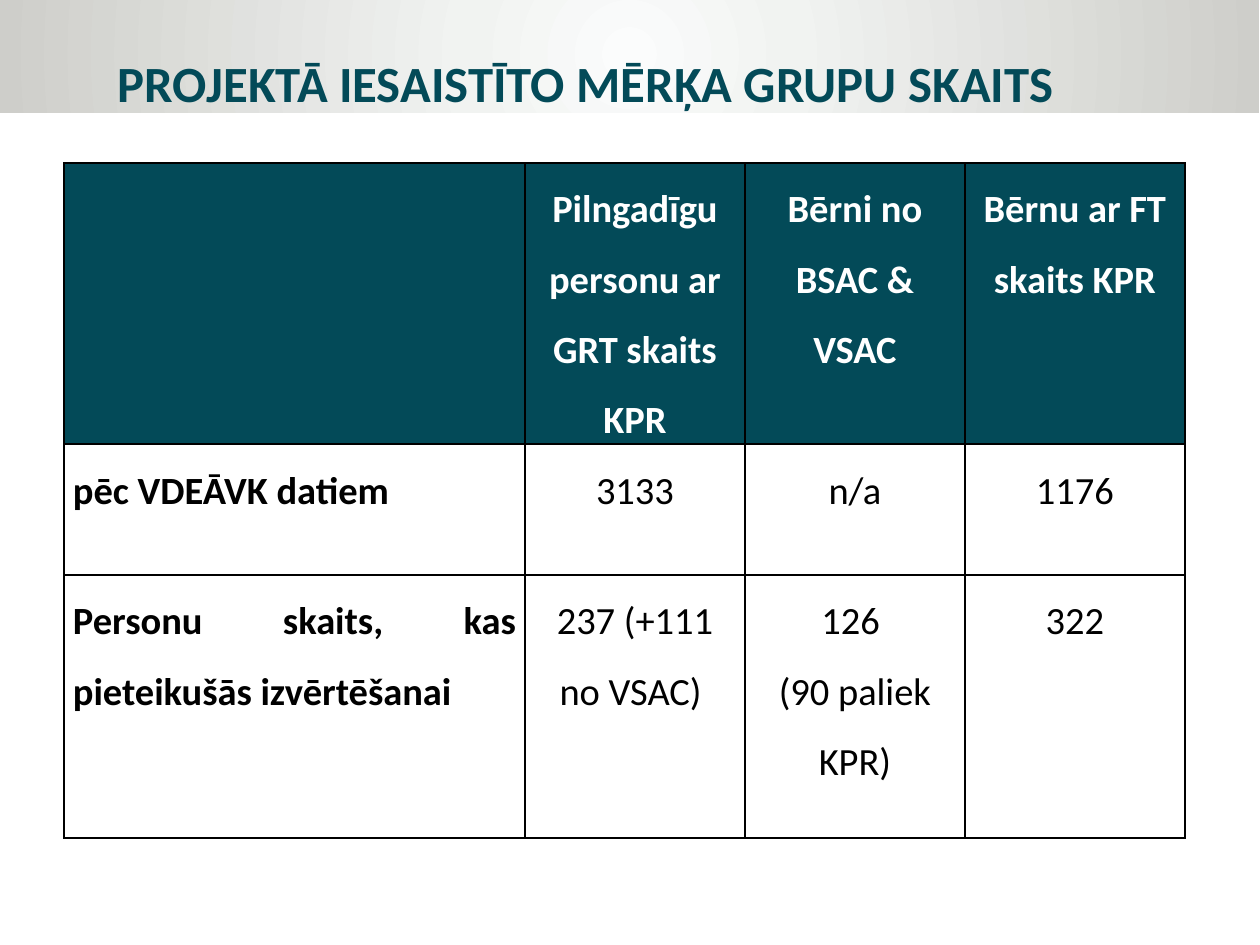
import pptx
import pptx.dml.color
import pptx.enum.shapes
import pptx.enum.text
import pptx.oxml
import pptx.oxml.ns
import pptx.util

RGBColor = pptx.dml.color.RGBColor
TEAL = RGBColor(0x03, 0x4A, 0x58)
WHITE = RGBColor(0xFF, 0xFF, 0xFF)
BLACK = RGBColor(0x00, 0x00, 0x00)
BAND_STOPS = [
    (0, RGBColor(0xFB, 0xFC, 0xFC)),
    (26, RGBColor(0xF1, 0xF3, 0xF1)),
    (100, RGBColor(0xCE, 0xCE, 0xCA)),
]
FONT = "Calibri"
ALIGN = pptx.enum.text.PP_ALIGN
NAMESPACE = pptx.oxml.ns.nsdecls("a")

ROWS = [
    ["", "Pilngadīgu personu ar GRT skaits KPR", "Bērni no BSAC & VSAC",
     "Bērnu ar FT skaits KPR"],
    ["pēc VDEĀVK datiem", "3133", "n/a", "1176"],
    ["Personu skaits, kas pieteikušās izvērtēšanai", "237 (+111 no VSAC) ",
     "126 \n(90 paliek KPR)", "322"],
]
COLUMN_WIDTHS = [461, 220, 220, 220]
ROW_HEIGHTS = [263, 131, 263]


def px(length):
    """Turn a length at 126 px to the inch into EMU."""
    return pptx.util.Emu(round(length * 914400 / 126))


def add_borders(cell):
    properties = cell._tc.get_or_add_tcPr()
    for side in ("lnL", "lnR", "lnT", "lnB"):
        properties.append(pptx.oxml.parse_xml(
            f'<a:{side} {NAMESPACE} w="12700"><a:solidFill>'
            f'<a:srgbClr val="{BLACK}"/></a:solidFill></a:{side}>'))


presentation = pptx.Presentation()
presentation.slide_width = px(1260)
presentation.slide_height = px(945)
slide = presentation.slides.add_slide(presentation.slide_layouts[5])

# Header band with a radial gradient, behind the title
band = slide.shapes.add_shape(
    pptx.enum.shapes.MSO_SHAPE.RECTANGLE, px(0), px(-4), px(1259), px(117))
band.shadow.inherit = False
band.line.fill.background()
stops = "".join(
    f'<a:gs pos="{position * 1000}"><a:srgbClr val="{color}"/></a:gs>'
    for position, color in BAND_STOPS)
gradient = pptx.oxml.parse_xml(
    f'<a:gradFill {NAMESPACE} rotWithShape="1"><a:gsLst>{stops}</a:gsLst>'
    '<a:path path="circle"><a:fillToRect l="50000" t="50000" r="50000" b="50000"/>'
    '</a:path></a:gradFill>')
band._element.spPr.find(pptx.oxml.ns.qn("a:prstGeom")).addnext(gradient)
slide.shapes.title._element.addprevious(band._element)

# Title
title = slide.shapes.title
title.left, title.top, title.width, title.height = px(105), px(45), px(1081), px(74)
title.text_frame.text = "PROJEKTĀ IESAISTĪTO MĒRĶA GRUPU SKAITS"
title.text_frame.vertical_anchor = pptx.enum.text.MSO_ANCHOR.TOP
title.text_frame.auto_size = pptx.enum.text.MSO_AUTO_SIZE.NONE
paragraph = title.text_frame.paragraphs[0]
paragraph.alignment = ALIGN.LEFT
paragraph.font.name = FONT
paragraph.font.size = pptx.util.Pt(29)
paragraph.font.bold = True
paragraph.font.color.rgb = TEAL

# Table of target group counts
table = slide.shapes.add_table(
    len(ROWS), len(COLUMN_WIDTHS), px(64), px(163),
    px(sum(COLUMN_WIDTHS)), px(sum(ROW_HEIGHTS))).table
table.horz_banding = False
for column, width in zip(table.columns, COLUMN_WIDTHS):
    column.width = px(width)
for row, height in zip(table.rows, ROW_HEIGHTS):
    row.height = px(height)

for row_index, texts in enumerate(ROWS):
    is_header = row_index == 0
    for column_index, text in enumerate(texts):
        is_label = column_index == 0
        cell = table.cell(row_index, column_index)
        add_borders(cell)
        if is_header:
            cell.fill.solid()
            cell.fill.fore_color.rgb = TEAL
        else:
            cell.fill.background()
        cell.margin_left = cell.margin_right = px(9)
        cell.margin_top = cell.margin_bottom = 0
        cell.text_frame.text = text
        for paragraph in cell.text_frame.paragraphs:
            paragraph.alignment = ALIGN.JUSTIFY if is_label else ALIGN.CENTER
            paragraph.line_spacing = 1.5
            paragraph.font.name = FONT
            paragraph.font.size = pptx.util.Pt(22)
            paragraph.font.bold = is_header or is_label
            paragraph.font.color.rgb = WHITE if is_header else BLACK

presentation.save("out.pptx")
